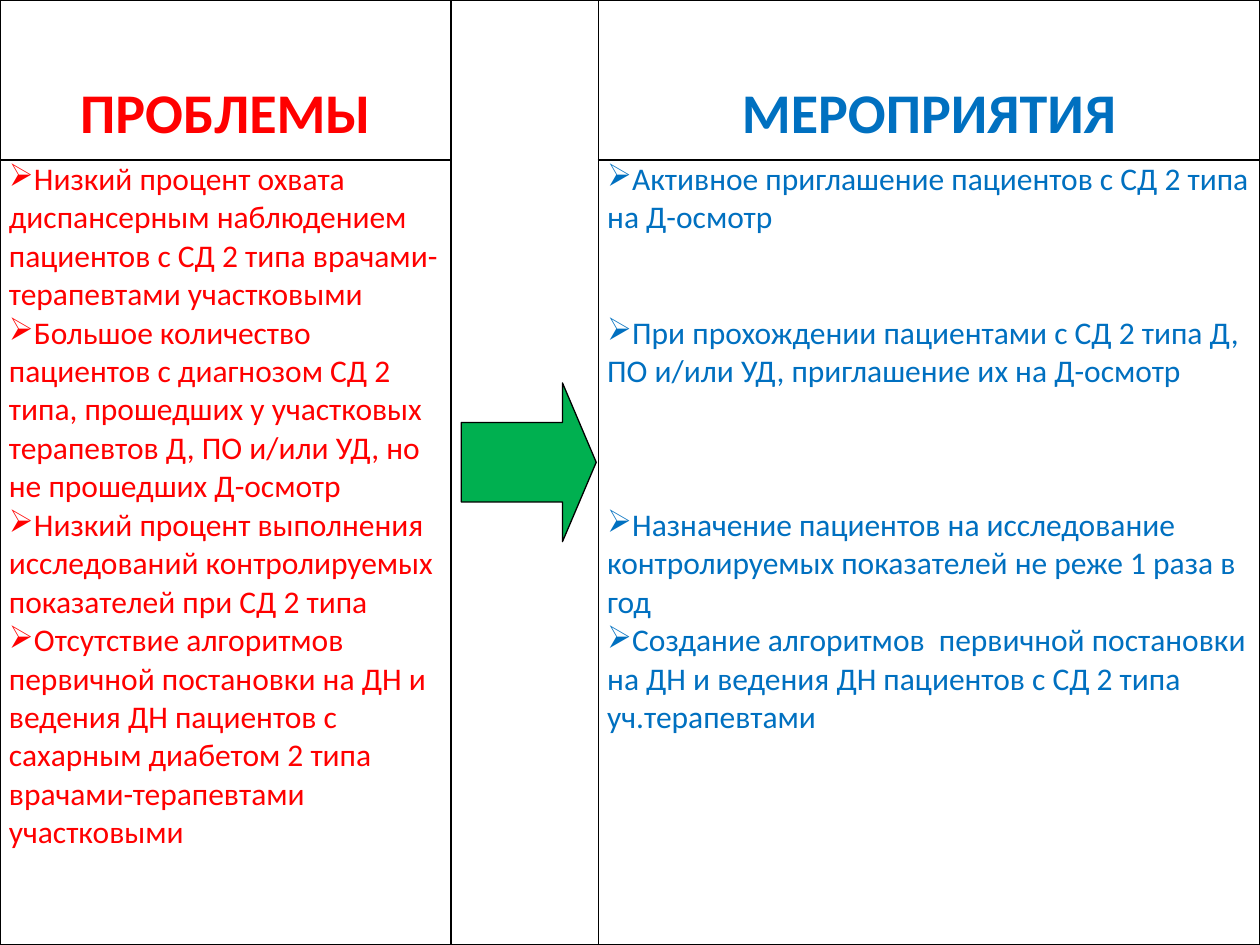
from lxml import etree
from pptx import Presentation
from pptx.dml.color import RGBColor
from pptx.enum.shapes import MSO_SHAPE as Shape
from pptx.enum.text import MSO_ANCHOR as Anchor, PP_ALIGN as Align
from pptx.oxml.ns import qn
from pptx.util import Cm, Pt

COLORS = {"problem": "FF0000", "action": "0070C0", "arrow": "00B050", "line": "000000"}
LINE_HEIGHT = 21.97  # points, one line of 18 pt Calibri

# Each list item: text, number of free lines after it
COLUMNS = [
    (0, "problem", "ПРОБЛЕМЫ", [
        ("Низкий процент охвата диспансерным наблюдением пациентов с СД 2 типа "
         "врачами-терапевтами участковыми", 0),
        ("Большое количество пациентов с диагнозом СД 2 типа, прошедших у участковых "
         "терапевтов Д, ПО и/или УД, но не прошедших Д-осмотр", 0),
        ("Низкий процент выполнения исследований контролируемых показателей при СД 2 типа", 0),
        ("Отсутствие алгоритмов  первичной постановки на ДН и ведения ДН пациентов "
         "с сахарным диабетом 2 типа врачами-терапевтами участковыми", 0),
    ]),
    (2, "action", "МЕРОПРИЯТИЯ", [
        ("Активное приглашение пациентов с СД 2 типа на Д-осмотр", 2),
        ("При прохождении пациентами с СД 2 типа Д, ПО и/или УД, приглашение их "
         "на Д-осмотр", 3),
        ("Назначение пациентов на исследование контролируемых показателей не реже "
         "1 раза в год", 0),
        ("Создание алгоритмов  первичной постановки на ДН и ведения ДН пациентов "
         "с СД 2 типа уч.терапевтами", 0),
    ]),
]


def write(paragraph, text, color, size, bold):
    run = paragraph.add_run()
    run.text = text
    for name, value in {"name": "Calibri", "size": Pt(size), "bold": bold}.items():
        setattr(run.font, name, value)
    run.font.color.rgb = RGBColor.from_string(COLORS[color])


def outline(cell):
    """Draw a 1 pt line on all four sides of the cell."""
    properties = cell._tc.get_or_add_tcPr()
    for side in ("lnL", "lnR", "lnT", "lnB"):
        line = etree.SubElement(properties, qn(f"a:{side}"), w=str(Pt(1)))
        fill = etree.SubElement(line, qn("a:solidFill"))
        etree.SubElement(fill, qn("a:srgbClr"), val=COLORS["line"])


deck = Presentation()
deck.slide_width, deck.slide_height = Cm(25.4), Cm(19.05)
slide = deck.slides.add_slide(deck.slide_layouts[6])

plan = slide.shapes.add_table(2, 3, 0, 0, deck.slide_width, deck.slide_height).table
for column, width in zip(plan.columns, (9.09, 2.97, 13.34)):
    column.width = Cm(width)
for row, height in zip(plan.rows, (3.23, 15.82)):
    row.height = Cm(height)

CELL_FORMAT = {"margin_left": Cm(0.18), "margin_right": Cm(0.18),
               "margin_top": 0, "margin_bottom": 0}
for cell in plan.iter_cells():
    outline(cell)
    cell.fill.background()
    for name, value in CELL_FORMAT.items():
        setattr(cell, name, value)
plan.cell(0, 1).merge(plan.cell(1, 1))

for column, color, heading, items in COLUMNS:
    heading_cell = plan.cell(0, column)
    heading_cell.vertical_anchor = Anchor.MIDDLE
    title = heading_cell.text_frame.paragraphs[0]
    title.alignment = Align.CENTER
    title.line_spacing = 2.0
    write(title, heading, color, 32, True)

    body = plan.cell(1, column).text_frame
    for index, (text, free_lines) in enumerate(items):
        item = body.add_paragraph() if index else body.paragraphs[0]
        item.space_after = Pt(free_lines * LINE_HEIGHT)
        write(item, text, color, 18, False)
        etree.SubElement(item._p.get_or_add_pPr(), qn("a:buChar"), char="➢")

arrow = slide.shapes.add_shape(Shape.RIGHT_ARROW, Cm(9.3), Cm(7.72), Cm(2.72), Cm(3.2))
arrow.adjustments[0], arrow.adjustments[1] = 0.5, 0.25
arrow.shadow.inherit = False
arrow.fill.solid()
arrow.fill.fore_color.rgb = RGBColor.from_string(COLORS["arrow"])
arrow.line.color.rgb = RGBColor.from_string(COLORS["line"])
arrow.line.width = Pt(0.75)

deck.save("out.pptx")
